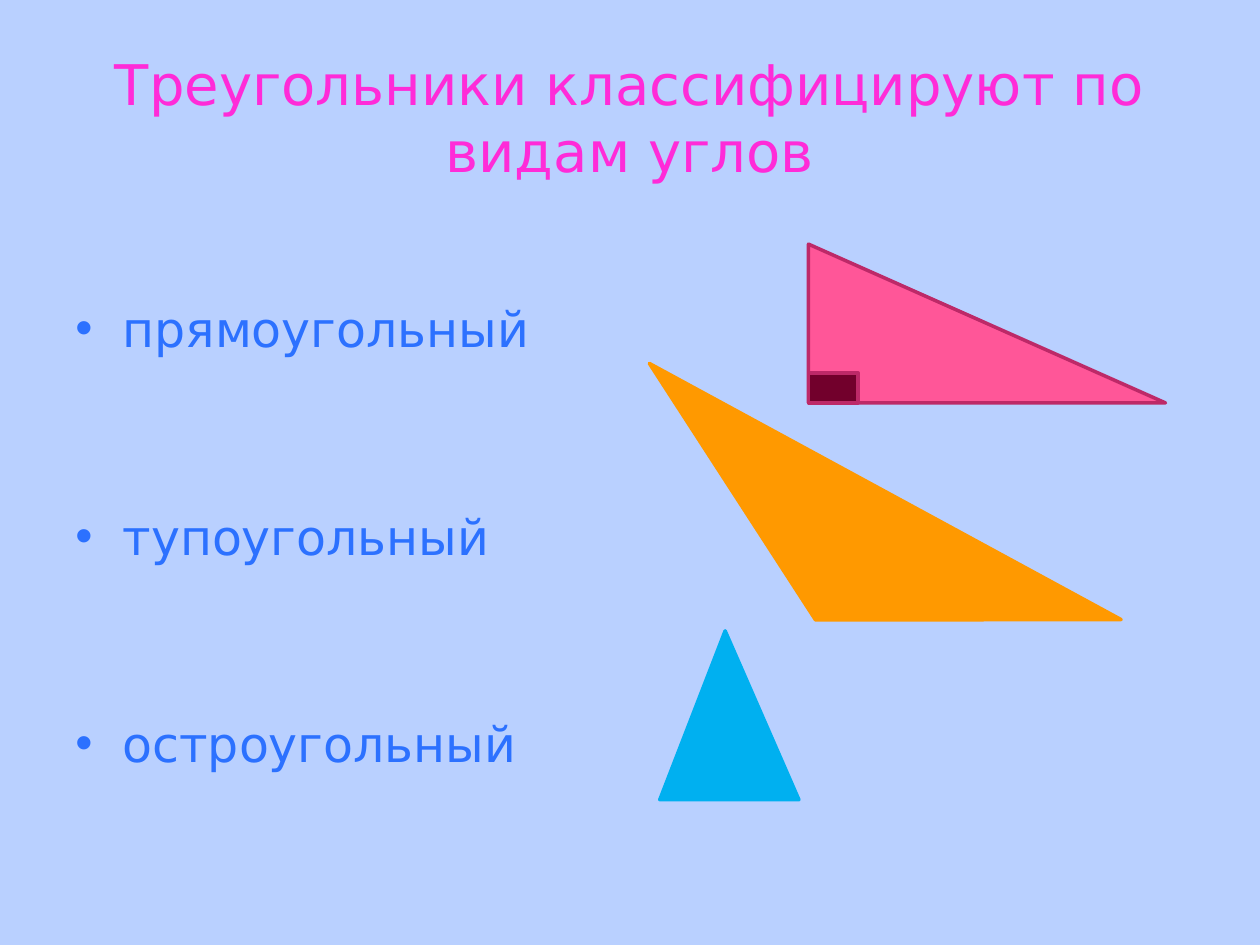
from lxml import etree
from pptx import Presentation
from pptx.dml.color import RGBColor
from pptx.enum import shapes, text
from pptx.oxml.ns import qn
from pptx.util import Pt

THEME = dict(
    font="DejaVu Sans", title_size=32, item_size=28, line_width=2,
    background="B9D0FF", title="FF2BD8", item="2C71FF",
    pink="FF5698", crimson="BD2968", maroon="72002C",
    orange="FF9900", blue="00B0F0",
)
KIND = shapes.MSO_SHAPE
TITLE = "Треугольники классифицируют по видам углов"
TITLE_BOX = (36, 21.6, 648, 90)
ITEMS = ["прямоугольный", "тупоугольный", "остроугольный"]
ITEMS_BOX = (36, 167, 318, 315)
ITEM_GAP = 85
INDENT = 27

# kind, (left, top, width, height), fill, line, rotation, apex position
FIGURES = [
    (KIND.RIGHT_TRIANGLE, (462, 139.5, 204, 90.75), "pink", "crimson", 0, None),
    (KIND.ISOSCELES_TRIANGLE, (377, 360.5, 79.5, 96.5), "blue", "blue", 0, 0.47),
    (KIND.ISOSCELES_TRIANGLE, (332.6, 275.8, 306.7, 83.5), "orange", "orange", 208.5, 0.5),
    (KIND.RECTANGLE, (462, 213, 28.3, 17.25), "maroon", "crimson", 0, None),
]


def color(name):
    return RGBColor.from_string(THEME[name])


def add_bullet(p):
    pPr = p._p.get_or_add_pPr()
    pPr.set("marL", str(Pt(INDENT)))
    pPr.set("indent", str(-Pt(INDENT)))
    etree.SubElement(pPr, qn("a:buFont"), typeface="Arial")
    etree.SubElement(pPr, qn("a:buChar"), char="•")


def add_text(s, lines, box, *, role, align=text.PP_ALIGN.LEFT,
             anchor=text.MSO_ANCHOR.TOP, gap=0, bullets=False):
    tf = s.shapes.add_textbox(*map(Pt, box)).text_frame
    tf.word_wrap = True
    tf.vertical_anchor = anchor
    for i, line in enumerate(lines):
        p = tf.paragraphs[0] if i == 0 else tf.add_paragraph()
        p.alignment = align
        if i:
            p.space_before = Pt(gap)
        if bullets:
            add_bullet(p)
        r = p.add_run()
        r.text = line
        r.font.name = THEME["font"]
        r.font.size = Pt(THEME[role + "_size"])
        r.font.color.rgb = color(role)


def add_figure(s, kind, box, fill, line, rotation, apex):
    sp = s.shapes.add_shape(kind, *map(Pt, box))
    sp.shadow.inherit = False
    sp.fill.solid()
    sp.fill.fore_color.rgb = color(fill)
    sp.line.color.rgb = color(line)
    sp.line.width = Pt(THEME["line_width"])
    sp.rotation = rotation
    if apex is not None:
        sp.adjustments[0] = apex


def main():
    prs = Presentation()
    prs.slide_width, prs.slide_height = Pt(720), Pt(540)
    s = prs.slides.add_slide(prs.slide_layouts[6])
    s.background.fill.solid()
    s.background.fill.fore_color.rgb = color("background")
    add_text(s, [TITLE], TITLE_BOX, role="title",
             align=text.PP_ALIGN.CENTER, anchor=text.MSO_ANCHOR.MIDDLE)
    add_text(s, ITEMS, ITEMS_BOX, role="item", gap=ITEM_GAP, bullets=True)
    for figure in FIGURES:
        add_figure(s, *figure)
    prs.save("out.pptx")


if __name__ == "__main__":
    main()
